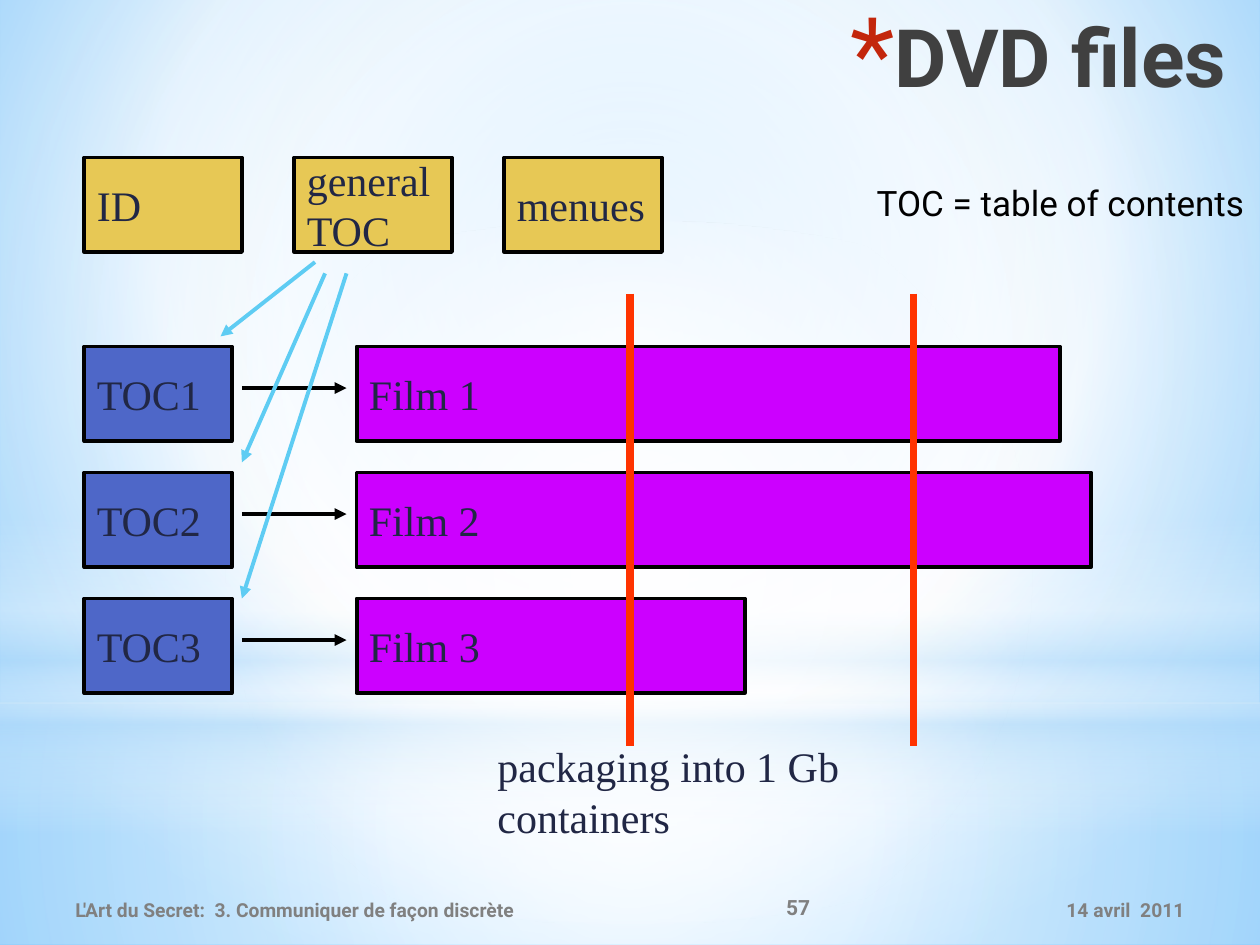
from lxml.etree import SubElement as Sub
from pptx import Presentation
from pptx.dml.color import RGBColor as RGB
from pptx.enum.shapes import MSO_CONNECTOR as Conn, MSO_SHAPE as Kind
from pptx.enum.text import MSO_ANCHOR as Anchor, PP_ALIGN as Align
from pptx.oxml import parse_xml
from pptx.oxml.ns import nsdecls, qn
from pptx.util import Inches, Pt

THEME = {
    "sans": "Roboto", "serif": "Times New Roman",
    "ink": "212745", "black": "000000", "title": "404040", "grey": "808080",
    "star": "C3260C", "gold": "E7C855", "blue": "4E67C8", "film": "CC00FF",
    "sky": "5ECCF3", "cut": "FF3300",
    "big": 46, "body": 24, "note": 20, "page": 12, "foot": 11,
    "edge": 2.25, "thick": 4.5,
}

BACK = ([(0, "9ED5FF", 100), (60, "FFFFFF", 100), (100, "5BB9FF", 100)], (20, 10, 20, 60))
MID = (50, 50, 50, 50)
GLOWS = [
    (Kind.RECTANGLE, (0, 5.58, 10, 1.92),
     [(0, "FFFFFF", 91), (37, "FFFFFF", 76), (100, "B4DCFA", 79)], MID),
    (Kind.RECTANGLE, (0, 0, 10, 5.58),
     [(0, "FFFFFF", 89), (48, "FFFFFF", 62), (100, "B4DCFA", 79)], MID),
    (Kind.RECTANGLE, (0, 4.12, 10, 2.5),
     [(0, "FFFFFF", 0), (29, "FFFFFF", 30), (45, "B4DCFA", 40),
      (55, "FFFFFF", 26), (65, "B4DCFA", 60), (100, "FFFFFF", 0)], None),
    (Kind.OVAL, (0, 1.75, 10, 5.58), [(0, "FFFFFF", 100), (56, "FFFFFF", 0)], MID),
]

HEADS = ["ID", "general\nTOC", "menues"]
FILMS = [("TOC1", "Film 1", 5.58), ("TOC2", "Film 2", 5.83), ("TOC3", "Film 3", 3.08)]
CUTS = [5, 7.25]
LINKS = [((2.5, 2.08), (1.75, 2.67)), ((2.58, 2.17), (1.92, 3.67)),
         ((2.75, 2.17), (1.92, 4.75))]

SERIF = {"name": "serif", "size": "body", "color": "ink"}
FOOT = {"name": "sans", "size": "foot", "color": "grey", "bold": True}
TITLE = FOOT | {"size": "big", "color": "title"}
NOTE = {"name": "sans", "size": "note", "color": "black"}
LABELS = [
    ("packaging into 1 Gb containers", (3.85, 5.83, 4.36, 0.5), SERIF,
     {"word_wrap": False}, Align.LEFT),
    ("TOC = table of contents", (6.86, 1.39, 3.14, 0.43), NOTE,
     {"word_wrap": False}, Align.LEFT),
    ("14 avril  2011", (6.75, 7.02, 2.75, 0.4), FOOT,
     {"vertical_anchor": Anchor.MIDDLE}, Align.RIGHT),
    ("L'Art du Secret:  3. Communiquer de façon discrète", (0.5, 7.02, 5.42, 0.4), FOOT,
     {"vertical_anchor": Anchor.MIDDLE}, Align.LEFT),
    ("57", (5.92, 7, 0.83, 0.4), FOOT | {"size": "page"},
     {"vertical_anchor": Anchor.MIDDLE}, Align.CENTER),
]

LEFT, ROW, HIGH = 0.67, 2.75, 0.75


def tint(name):
    """Return a theme colour."""
    return RGB.from_string(THEME[name])


def blend(solid, stops, focus):
    """Swap a solid fill for a gradient."""
    marks = "".join(
        f'<a:gs pos="{pos * 1000}"><a:srgbClr val="{hue}">'
        f'<a:alpha val="{alpha * 1000}"/></a:srgbClr></a:gs>'
        for pos, hue, alpha in stops)
    if focus:
        sides = " ".join(f'{side}="{val * 1000}"' for side, val in zip("ltrb", focus))
        way = f'<a:path path="circle"><a:fillToRect {sides}/></a:path>'
    else:
        way = '<a:lin ang="5400000" scaled="0"/>'
    fill = parse_xml(f'<a:gradFill {nsdecls("a")} rotWithShape="1">'
                     f'<a:gsLst>{marks}</a:gsLst>{way}</a:gradFill>')
    solid.getparent().replace(solid, fill)


def write(shape, text, style, frame, align=Align.LEFT):
    """Fill a shape with styled text."""
    body = shape.text_frame
    for key, val in ({"word_wrap": True} | frame).items():
        setattr(body, key, val)
    body.text = text
    for para in body.paragraphs:
        para.alignment = align
        font = para.runs[0].font
        look = {"name": THEME[style["name"]], "size": Pt(THEME[style["size"]]),
                "bold": style.get("bold", False)}
        for key, val in look.items():
            setattr(font, key, val)
        font.color.rgb = tint(style["color"])
    return body


def label(slide, text, at, *rest):
    """Add a text box."""
    return write(slide.shapes.add_textbox(*map(Inches, at)), text, *rest)


def block(slide, text, at, fill):
    """Add an outlined box with text."""
    box = slide.shapes.add_shape(Kind.RECTANGLE, *map(Inches, at))
    box.shadow.inherit = False
    box.fill.solid()
    box.fill.fore_color.rgb = tint(fill)
    box.line.color.rgb = tint("black")
    box.line.width = Pt(THEME["edge"])
    write(box, text, SERIF, {"word_wrap": False, "vertical_anchor": Anchor.MIDDLE})


def rule(slide, start, end, color, width="edge", arrow=True):
    """Add a line, with an arrowhead if wanted."""
    line = slide.shapes.add_connector(Conn.STRAIGHT, *map(Inches, start + end))
    line.line.color.rgb = tint(color)
    line.line.width = Pt(THEME[width])
    if arrow:
        Sub(line.line._get_or_add_ln(), qn("a:tailEnd"), type="triangle")
    Sub(line.element.spPr, qn("a:effectLst"))


def paint(slide):
    """Draw the backdrop and its glows."""
    slide.background.fill.solid()
    blend(slide.element.xpath(".//p:bgPr/a:solidFill")[0], *BACK)
    for kind, at, stops, focus in GLOWS:
        glow = slide.shapes.add_shape(kind, *map(Inches, at))
        glow.shadow.inherit = False
        glow.line.fill.background()
        glow.fill.solid()
        blend(glow.element.xpath("./p:spPr/a:solidFill")[0], stops, focus)


def head(slide):
    """Add the title with its star bullet."""
    body = label(slide, "DVD files", (0, 0.01, 9.83, 1.25), TITLE, {}, Align.RIGHT)
    props = body.paragraphs[0]._p.get_or_add_pPr()
    props.set("marL", str(Inches(0.35)))
    props.set("indent", str(-Inches(0.35)))
    Sub(Sub(props, qn("a:buClr")), qn("a:srgbClr"), val=THEME["star"])
    Sub(props, qn("a:buSzPct"), val="128000")
    Sub(props, qn("a:buFont"), typeface=THEME["sans"])
    Sub(props, qn("a:buChar"), char="*")


def main():
    """Build the slide and save it."""
    deck = Presentation()
    deck.slide_width, deck.slide_height = Inches(10), Inches(7.5)
    slide = deck.slides.add_slide(deck.slide_layouts[6])
    paint(slide)
    head(slide)
    tops = [ROW + num for num in range(len(FILMS))]
    for top, (toc, film, wide) in zip(tops, FILMS):
        block(slide, film, (2.83, top, wide, HIGH), "film")
        block(slide, toc, (LEFT, top, 1.17, HIGH), "blue")
        rule(slide, (1.92, top + 0.33), (2.75, top + 0.33), "black")
    for left in CUTS:
        rule(slide, (left, 2.33), (left, 5.92), "cut", "thick", False)
    for num, text in enumerate(HEADS):
        block(slide, text, (LEFT + num * 5 / 3, 1.25, 1.25, HIGH), "gold")
    for start, end in LINKS:
        rule(slide, start, end, "sky")
    for item in LABELS:
        label(slide, *item)
    deck.save("out.pptx")


if __name__ == "__main__":
    main()
